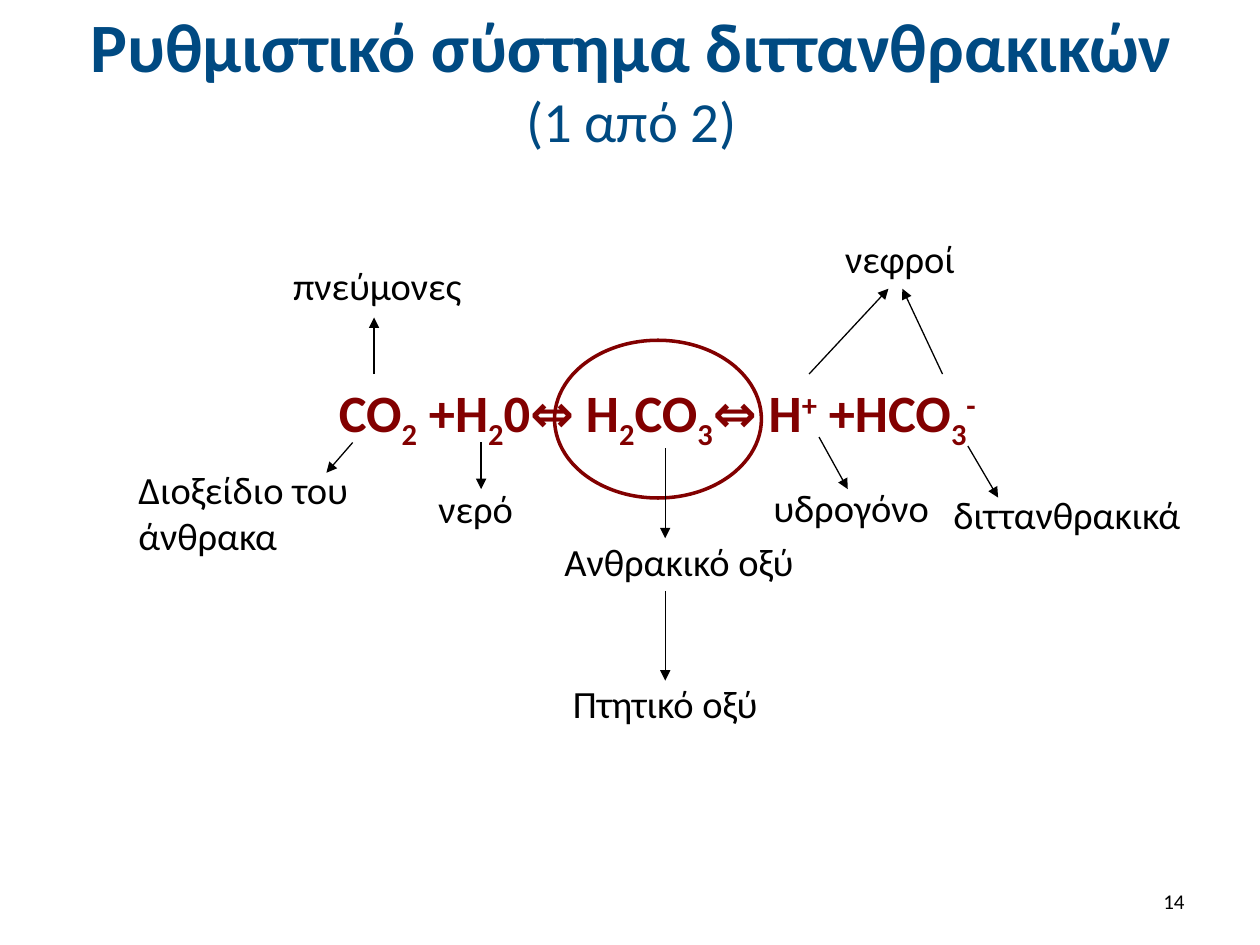
from dataclasses import dataclass
from typing import NamedTuple

from lxml.etree import SubElement
from pptx import Presentation
from pptx.dml.color import RGBColor
from pptx.enum.shapes import MSO_CONNECTOR, MSO_SHAPE
from pptx.enum.text import MSO_ANCHOR, MSO_AUTO_SIZE, PP_ALIGN
from pptx.oxml.ns import qn
from pptx.util import Cm, Pt


@dataclass(frozen=True)
class Theme:
    """Colours, font and sizes of the slide."""
    font: str = "Calibri"
    heading: RGBColor = RGBColor(0x00, 0x4A, 0x82)
    formula: RGBColor = RGBColor(0x82, 0x00, 0x00)
    ink: RGBColor = RGBColor(0x00, 0x00, 0x00)
    heading_size: float = 39.6
    part_size: float = 32.4
    formula_size: float = 30
    label_size: float = 22
    number_size: float = 12
    arrow_width: float = 0.75
    circle_width: float = 2


class Label(NamedTuple):
    """A caption and its box in centimetres."""
    text: str
    left: float
    top: float
    width: float
    height: float = 1.19
    wrap: bool = True


class Arrow(NamedTuple):
    """An arrow from its start to its head in centimetres."""
    start_x: float
    start_y: float
    end_x: float
    end_y: float


THEME = Theme()
SUBSCRIPT, SUPERSCRIPT = -25, 30

EQUATION = [
    ("CO", 0), ("2", SUBSCRIPT), (" +H", 0), ("2", SUBSCRIPT), ("0⇔ H", 0),
    ("2", SUBSCRIPT), ("CO", 0), ("3", SUBSCRIPT), ("⇔ H", 0),
    ("+", SUPERSCRIPT), (" +HCO", 0), ("3", SUBSCRIPT), ("-", SUPERSCRIPT),
]

LABELS = [
    Label("Διοξείδιο του άνθρακα", 2.54, 9.27, 5, height=2.13),
    Label("νερό", 8.59, 9.65, 2.24),
    Label("Ανθρακικό οξύ", 11.13, 10.72, 5.59),
    Label("Πτητικό οξύ", 11.3, 13.59, 4.57),
    Label("υδρογόνο", 15.34, 9.63, 3.76),
    Label("διττανθρακικά", 18.97, 9.78, 5.54),
    Label("πνεύμονες", 5.66, 5.16, 4.04, wrap=False),
    Label("νεφροί", 16.79, 4.62, 2.74, wrap=False),
]

ARROWS = [
    Arrow(7.11, 8.92, 6.58, 9.53),
    Arrow(9.7, 8.92, 9.7, 9.86),
    Arrow(13.41, 9.04, 13.41, 10.85),
    Arrow(13.41, 11.91, 13.41, 13.72),
    Arrow(16.51, 8.81, 17.09, 9.86),
    Arrow(19.51, 8.99, 20.12, 10.03),
    Arrow(7.54, 7.54, 7.54, 6.4),
    Arrow(16.31, 7.54, 17.91, 5.82),
    Arrow(19, 7.54, 18.19, 5.82),
]


def write_text(paragraph, text: str, *, size: float, color: RGBColor = THEME.ink,
               bold: bool = False, baseline: int = 0) -> None:
    """Append a formatted run to a paragraph."""
    run = paragraph.add_run()
    run.text = text
    run.font.name = THEME.font
    run.font.size = Pt(size)
    run.font.bold = bold
    run.font.color.rgb = color
    if baseline:
        run.font._element.set("baseline", str(baseline * 1000))


def add_box(slide, left: float, top: float, width: float, height: float,
            wrap: bool = True):
    """Add a text box and return its frame."""
    frame = slide.shapes.add_textbox(Cm(left), Cm(top), Cm(width), Cm(height)).text_frame
    frame.word_wrap = wrap
    return frame


def add_title(slide) -> None:
    """Place and fill the title."""
    title = slide.shapes.title
    title.left, title.top, title.width, title.height = Cm(1.3), Cm(0.33), Cm(22.86), Cm(2.51)
    frame = title.text_frame
    frame.auto_size = MSO_AUTO_SIZE.NONE
    frame.vertical_anchor = MSO_ANCHOR.MIDDLE
    heading = frame.paragraphs[0]
    heading.alignment = PP_ALIGN.CENTER
    write_text(heading, "Ρυθμιστικό σύστημα διττανθρακικών",
               size=THEME.heading_size, color=THEME.heading, bold=True)
    heading.add_line_break()
    write_text(heading, "(1 από 2)", size=THEME.part_size, color=THEME.heading)


def add_equation(slide) -> None:
    """Write the equilibrium with its subscripts and charges."""
    equation = add_box(slide, 6.58, 7.54, 15.14, 1.8).paragraphs[0]
    for text, baseline in EQUATION:
        write_text(equation, text, size=THEME.formula_size, color=THEME.formula,
                   bold=True, baseline=baseline)


def add_circle(slide) -> None:
    """Ring the carbonic acid."""
    circle = slide.shapes.add_shape(MSO_SHAPE.OVAL, Cm(11.18), Cm(6.86), Cm(4.17), Cm(3.18))
    circle.shadow.inherit = False
    circle.fill.background()
    circle.line.color.rgb = THEME.formula
    circle.line.width = Pt(THEME.circle_width)


def add_label(slide, label: Label) -> None:
    """Draw one caption."""
    frame = add_box(slide, label.left, label.top, label.width, label.height, label.wrap)
    frame.auto_size = MSO_AUTO_SIZE.SHAPE_TO_FIT_TEXT
    write_text(frame.paragraphs[0], label.text, size=THEME.label_size)


def add_arrow(slide, arrow: Arrow) -> None:
    """Draw one arrow with a triangular head."""
    connector = slide.shapes.add_connector(
        MSO_CONNECTOR.STRAIGHT, *(Cm(length) for length in arrow))
    connector.line.color.rgb = THEME.ink
    connector.line.width = Pt(THEME.arrow_width)
    SubElement(connector.line._get_or_add_ln(), qn("a:tailEnd"), type="triangle")
    SubElement(connector._element.spPr, qn("a:effectLst"))


def add_slide_number(slide) -> None:
    """Write the slide number at the lower right."""
    frame = add_box(slide, 18.21, 17.65, 5.92, 1.02)
    frame.vertical_anchor = MSO_ANCHOR.MIDDLE
    number = frame.paragraphs[0]
    number.alignment = PP_ALIGN.RIGHT
    write_text(number, "14", size=THEME.number_size)


def main() -> None:
    """Build and save the slide."""
    presentation = Presentation()
    presentation.slide_width, presentation.slide_height = Cm(25.4), Cm(19.05)
    slide = presentation.slides.add_slide(presentation.slide_layouts[5])
    add_title(slide)
    add_equation(slide)
    add_slide_number(slide)
    add_circle(slide)
    for label in LABELS:
        add_label(slide, label)
    for arrow in ARROWS:
        add_arrow(slide, arrow)
    presentation.save("out.pptx")


if __name__ == "__main__":
    main()
